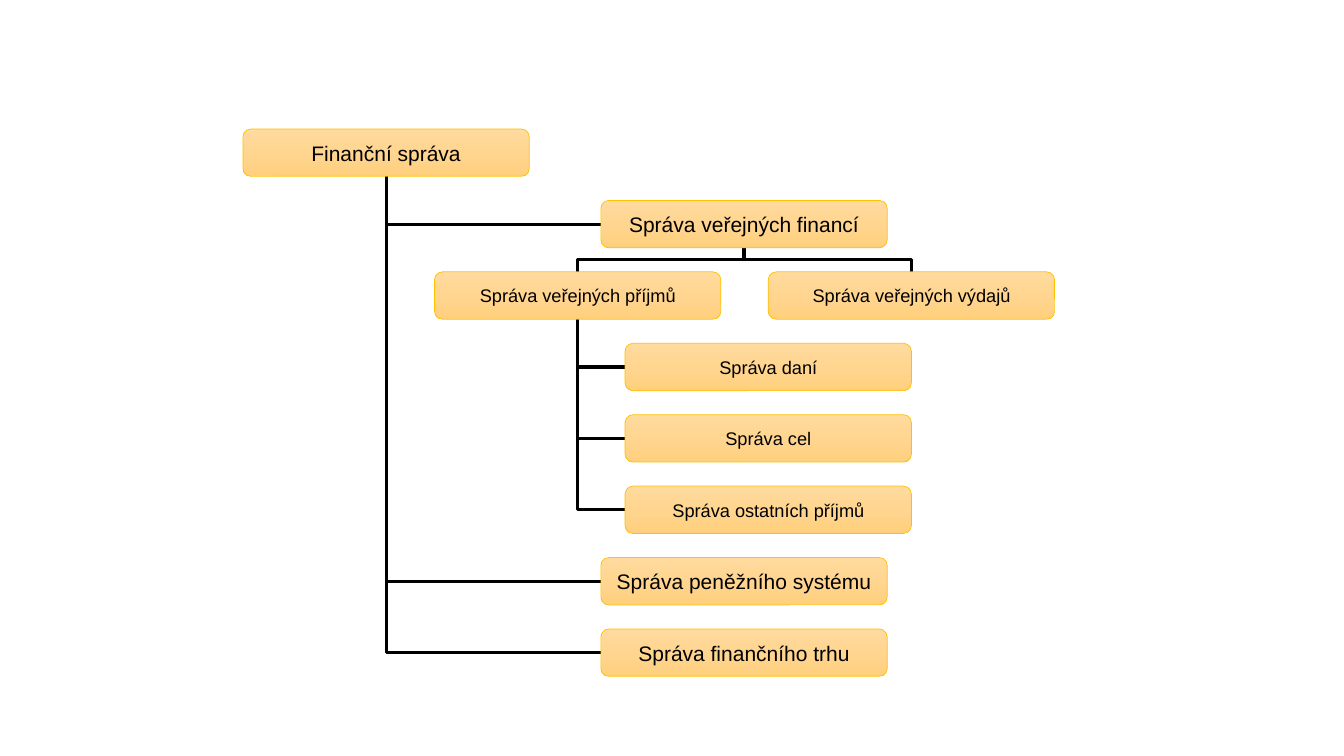
"""Build the organisation chart of financial administration."""
from copy import deepcopy

from lxml.etree import SubElement
from pptx import Presentation
from pptx.dml.color import RGBColor
from pptx.enum.shapes import MSO_CONNECTOR as Link, MSO_SHAPE as Preset
from pptx.enum.text import MSO_ANCHOR as Anchor, PP_ALIGN as Align
from pptx.oxml.ns import qn
from pptx.util import Inches, Pt

COLORS = {"top": "FFDB9E", "middle": "FFD590", "bottom": "FFD07C",
          "border": "FFC000", "text": "000000", "link": "000000"}
FONT = "Arial"

# name: (left, row, font size)
OFFICES = {
    "Finanční správa": (2.41, 0, 15),
    "Správa veřejných financí": (5.96, 1, 15),
    "Správa peněžního systému": (5.96, 6, 15),
    "Správa finančního trhu": (5.96, 7, 15),
    "Správa veřejných příjmů": (4.31, 2, 13),
    "Správa veřejných výdajů": (7.62, 2, 13),
    "Správa daní": (6.2, 3, 13),
    "Správa cel": (6.2, 4, 13),
    "Správa ostatních příjmů": (6.2, 5, 13),
}
HANGING = {
    "Finanční správa": ["Správa finančního trhu", "Správa peněžního systému",
                        "Správa veřejných financí"],
    "Správa veřejných příjmů": ["Správa ostatních příjmů", "Správa cel",
                                "Správa daní"],
}
FORKED = {
    "Správa veřejných financí": ["Správa veřejných výdajů",
                                 "Správa veřejných příjmů"],
}

FIRST_TOP, LAST_TOP = 1.28, 6.24
ROW_STEP = (LAST_TOP - FIRST_TOP) / 7
OFFICE_WIDTH, OFFICE_HEIGHT = 2.84, 0.47
TOP_SITE, LEFT_SITE, BOTTOM_SITE = 0, 1, 2


def rgb(part):
    return RGBColor.from_string(COLORS[part])


def paint_gradient(office):
    office.fill.gradient()
    office.fill.gradient_angle = 270
    stop_list = office._element.spPr.find(".//" + qn("a:gsLst"))
    stop_list.insert(1, deepcopy(stop_list[0]))
    shades = zip(office.fill.gradient_stops, ("top", "middle", "bottom"), (0, 0.5, 1))
    for stop, shade, position in shades:
        stop.color.rgb = rgb(shade)
        stop.position = position


def add_office(slide, name, left, row, size):
    office = slide.shapes.add_shape(
        Preset.ROUNDED_RECTANGLE, Inches(left), Inches(FIRST_TOP + row * ROW_STEP),
        Inches(OFFICE_WIDTH), Inches(OFFICE_HEIGHT))
    office.shadow.inherit = False
    paint_gradient(office)
    office.line.color.rgb = rgb("border")
    office.line.width = Pt(0.5)
    frame = office.text_frame
    frame.margin_left = frame.margin_right = frame.margin_top = frame.margin_bottom = 0
    frame.vertical_anchor = Anchor.MIDDLE
    frame.word_wrap = False
    label = frame.paragraphs[0]
    label.text = name
    label.alignment = Align.CENTER
    label.font.name = FONT
    label.font.size = Pt(size)
    label.font.color.rgb = rgb("text")
    return office


def add_link(slide, child, child_site, parent):
    link = slide.shapes.add_connector(Link.ELBOW, 0, 0, 0, 0)
    link.begin_connect(child, child_site)
    link.end_connect(parent, BOTTOM_SITE)
    link.line.color.rgb = rgb("link")
    link.line.width = Pt(2.25)
    SubElement(link._element.spPr, qn("a:effectLst"))
    return link


def hang(link):
    link._element.spPr.find(qn("a:prstGeom")).set("prst", "bentConnector2")


def fork(link):
    turn = 90 if link.begin_x > link.end_x else 270
    span, drop = link.width, link.height
    link.left += (span - drop) // 2
    link.top += (drop - span) // 2
    link.width, link.height = drop, span
    frame = link._element.spPr.find(qn("a:xfrm"))
    frame.attrib.pop("flipV", None)
    frame.set("rot", str(turn * 60000))


def main():
    deck = Presentation()
    deck.slide_width, deck.slide_height = Inches(13.33), Inches(7.5)
    slide = deck.slides.add_slide(deck.slide_layouts[6])
    offices = {name: add_office(slide, name, *place) for name, place in OFFICES.items()}
    for branches, site, bend in ((HANGING, LEFT_SITE, hang), (FORKED, TOP_SITE, fork)):
        for parent, children in branches.items():
            for child in children:
                bend(add_link(slide, offices[child], site, offices[parent]))
    for office in offices.values():
        slide.shapes._spTree.append(office._element)
    deck.save("out.pptx")


if __name__ == "__main__":
    main()
